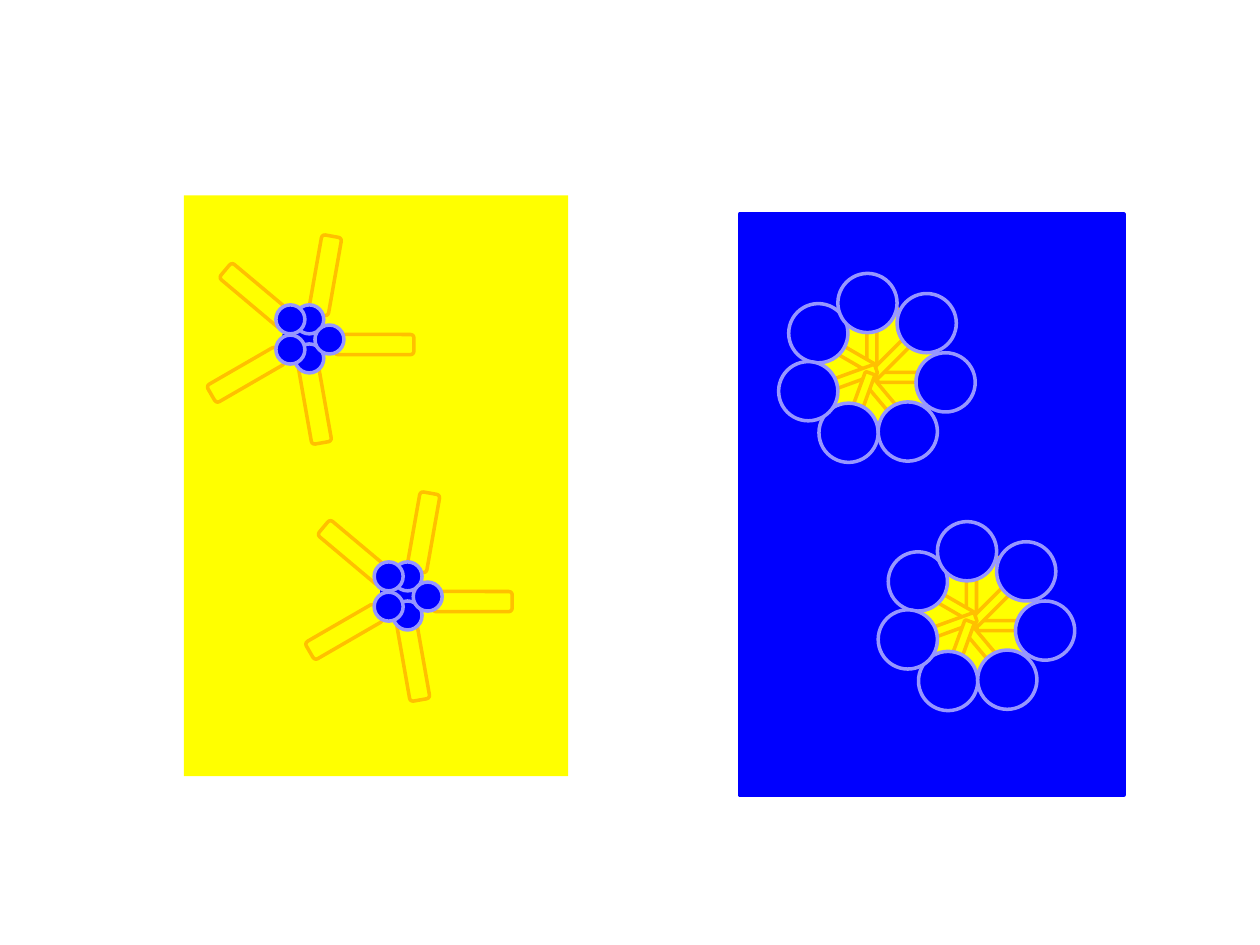
"""Draw two panels of micelles, one with tails outward and one with tails inward."""
from pptx import Presentation
from pptx.dml.color import RGBColor
from pptx.enum.shapes import MSO_SHAPE
from pptx.util import Inches, Pt

RECTANGLE = MSO_SHAPE.RECTANGLE
OVAL = MSO_SHAPE.OVAL
ROUNDED = MSO_SHAPE.ROUNDED_RECTANGLE

BLUE, YELLOW, ORANGE, LILAC = "0000FF", "FFFF00", "FFC000", "9797FF"
PANEL_SIZE = (3.05, 4.61)

WATER_PANEL = (5.87, 1.7)
WATER_MICELLES = [(6.18, 2.17), (6.97, 4.14)]
OIL_CORE = (0.23, 0.24)
INWARD_TAILS = [
    (0.7, 0.39, 0), (0.78, 0.78, 140), (0.94, 0.63, 90), (0.86, 0.47, 45),
    (0.55, 0.47, -60), (0.55, 0.63, 70), (0.62, 0.78, 20),
]
OUTER_HEADS = [
    (0.08, 0.24), (0.32, 1.03), (0, 0.7), (0.47, 0),
    (0.94, 0.16), (1.09, 0.63), (0.79, 1.02),
]

OIL_PANEL = (1.46, 1.55)
OIL_MICELLES = [
    {"origin": (2.65, 3.91), "core": (3.03, 4.54)},
    {"origin": (1.87, 1.87), "core": (2.24, 2.57)},
]
OUTWARD_TAILS = [
    (0.63, 0, 10), (0.55, 1.02, -10), (1.02, 0.55, 90),
    (0.08, 0.16, -50), (0, 0.79, 60),
]
INNER_HEADS = [(0.47, 0.55), (0.32, 0.55), (0.47, 0.86), (0.63, 0.71), (0.32, 0.79)]


def color(value):
    return RGBColor.from_string(value)


def add_part(group, kind, position, size, fill, line=None, rotation=0):
    left, top = position
    width, height = size
    part = group.shapes.add_shape(
        kind, Inches(left), Inches(top), Inches(width), Inches(height))
    part.shadow.inherit = False
    part.rotation = rotation
    part.fill.solid()
    part.fill.fore_color.rgb = color(fill)
    if line:
        part.line.color.rgb = color(line)
        part.line.width = Pt(2)
    else:
        part.line.fill.background()


def shift(origin, offset):
    return origin[0] + offset[0], origin[1] + offset[1]


def add_tails(group, origin, tails, size):
    for left, top, rotation in tails:
        add_part(group, ROUNDED, shift(origin, (left, top)), size,
                 YELLOW, ORANGE, rotation)


def add_heads(group, origin, heads, diameter):
    for offset in heads:
        add_part(group, OVAL, shift(origin, offset), (diameter, diameter), BLUE, LILAC)


def main():
    deck = Presentation()
    deck.slide_width, deck.slide_height = Inches(10), Inches(7.5)
    page = deck.slides.add_slide(deck.slide_layouts[6])

    water = page.shapes.add_group_shape()
    add_part(water, RECTANGLE, WATER_PANEL, PANEL_SIZE, BLUE, BLUE)
    for origin in WATER_MICELLES:
        add_part(water, OVAL, shift(origin, OIL_CORE), (1.02, 1.02), YELLOW, ORANGE)
        add_tails(water, origin, INWARD_TAILS, (0.08, 0.39))
        add_heads(water, origin, OUTER_HEADS, 0.47)

    oil = page.shapes.add_group_shape()
    add_part(oil, RECTANGLE, OIL_PANEL, PANEL_SIZE, YELLOW)
    for micelle in OIL_MICELLES:
        add_tails(oil, micelle["origin"], OUTWARD_TAILS, (0.16, 0.63))
        add_part(oil, OVAL, micelle["core"], (0.31, 0.31), BLUE, BLUE)
    for micelle in reversed(OIL_MICELLES):
        add_heads(oil, micelle["origin"], INNER_HEADS, 0.23)

    deck.save("out.pptx")


if __name__ == "__main__":
    main()
